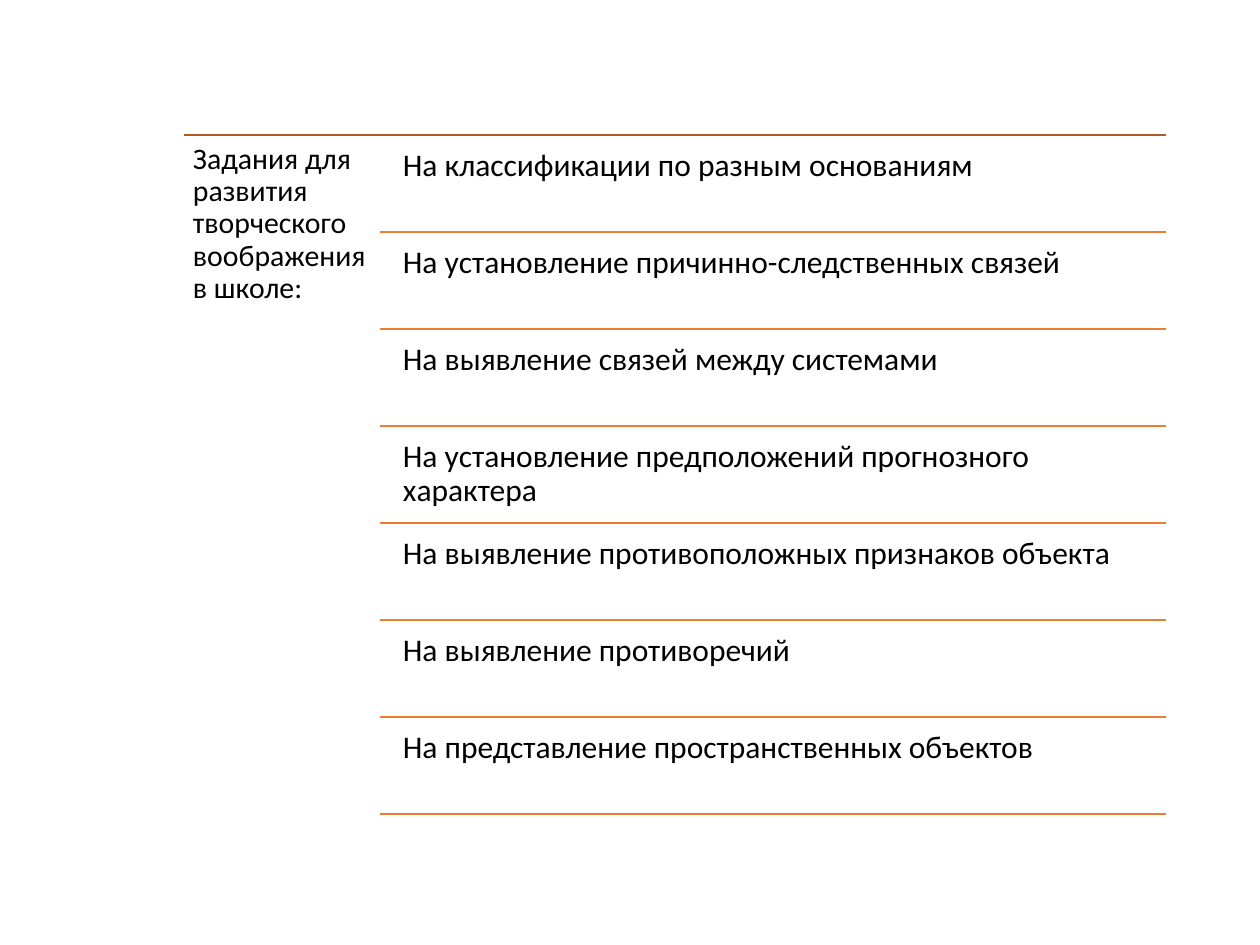
from lxml.etree import SubElement
from pptx import Presentation
from pptx.dml.color import RGBColor
from pptx.enum.shapes import MSO_CONNECTOR as Conn
from pptx.enum.text import MSO_ANCHOR as Anchor
from pptx.oxml.ns import qn
from pptx.util import Emu, Pt

SCALE = 914400 // 126
FONT = "Calibri"
BLACK, ORANGE, BROWN = "000000", "ED7D31", "AF5C24"
HEADING = "Задания для развития творческого воображения в школе:"
TASKS = [
    "На классификации по разным основаниям",
    "На установление причинно-следственных связей",
    "На выявление связей между системами",
    "На установление предположений прогнозного характера",
    "На выявление противоположных признаков объекта",
    "На выявление противоречий",
    "На представление пространственных объектов",
]


def px(n):
    """Turn whole pixels into EMU."""
    return Emu(n * SCALE)


def color(value):
    """Turn a hex string into a colour."""
    return RGBColor.from_string(value)


def add_rule(s, x, y, w, line_color):
    """Draw a horizontal rule of the given width."""
    c = s.shapes.add_connector(Conn.STRAIGHT, px(x), px(y), px(x + w), px(y))
    c.line.color.rgb = color(line_color)
    c.line.width = Pt(1)
    SubElement(c._element.spPr, qn("a:effectLst"))


def add_text(s, x, y, w, h, text, size):
    """Place a wrapped, top-anchored text box."""
    sp = s.shapes.add_textbox(px(x), px(y), px(w), px(h))
    tf = sp.text_frame
    tf.word_wrap = True
    tf.vertical_anchor = Anchor.TOP
    tf.margin_left = tf.margin_right = tf.margin_top = tf.margin_bottom = px(9)
    p = tf.paragraphs[0]
    p.line_spacing = 0.9
    r = p.add_run()
    r.text = text
    r.font.name = FONT
    r.font.size = Pt(size)
    r.font.color.rgb = color(BLACK)


def add_task_list(s, x, y, w, h, heading, tasks):
    """Lay out a heading column beside equal ruled rows of tasks."""
    col, indent, gap = 196, 14, 5
    row = h // len(tasks)
    add_rule(s, x, y, w, BROWN)
    add_text(s, x, y, col, h, heading, 17)
    for i, task in enumerate(tasks):
        top = y + i * row
        add_text(s, x + col + indent, top + gap, w - col - indent, row - gap, task, 18)
        add_rule(s, x + col, top + row, w - col, ORANGE)


def main():
    """Build and save the slide."""
    prs = Presentation()
    prs.slide_width, prs.slide_height = px(1260), px(945)
    s = prs.slides.add_slide(prs.slide_layouts[6])
    add_task_list(s, 184, 135, 982, 679, HEADING, TASKS)
    prs.save("out.pptx")


if __name__ == "__main__":
    main()
